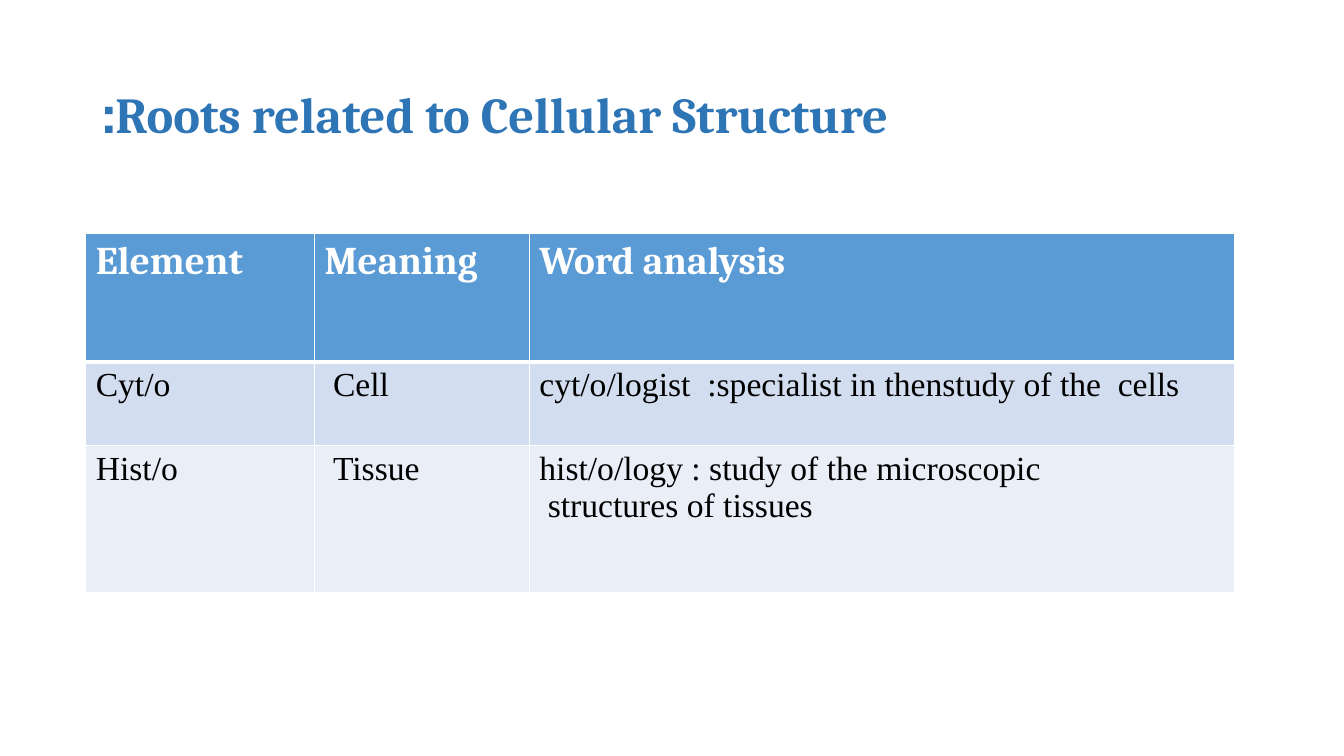
from lxml import etree
from pptx import Presentation
from pptx.dml.color import RGBColor
from pptx.enum.text import MSO_ANCHOR, PP_ALIGN
from pptx.oxml.ns import qn
from pptx.util import Inches, Pt

MIDDLE = MSO_ANCHOR.MIDDLE
LEFT = PP_ALIGN.LEFT

THEME = {
    "title": ("Cambria", 36, True, "2E75B6"),
    "header": ("Cambria", 28, True, "FFFFFF"),
    "body": ("Times New Roman", 24, False, "000000"),
    "fills": ["5B9BD5", "D2DEEF", "EAEFF7"],
    "border": "FFFFFF",
}


def write_rtl(frame, text, style):
    face, size, bold, color = THEME[style]
    frame.text = text
    for paragraph in frame.paragraphs:
        paragraph.alignment = LEFT
        paragraph._p.get_or_add_pPr().set("rtl", "1")
        paragraph.font.name = face
        paragraph.font.size = Pt(size)
        paragraph.font.bold = bold
        paragraph.font.color.rgb = RGBColor.from_string(color)


def add_borders(cell, widths):
    properties = cell._tc.get_or_add_tcPr()
    for position, (side, width) in enumerate(widths.items()):
        line = etree.Element(qn(f"a:{side}"), w=str(Pt(width)))
        fill = etree.SubElement(line, qn("a:solidFill"))
        etree.SubElement(fill, qn("a:srgbClr"), val=THEME["border"])
        properties.insert(position, line)


prs = Presentation()
prs.slide_width = Inches(13.33)
prs.slide_height = Inches(7.5)
slide = prs.slides.add_slide(prs.slide_layouts[6])

heading = slide.shapes.add_textbox(
    Inches(0.92), Inches(0.4), Inches(9.88), Inches(1.45)
).text_frame
heading.word_wrap = True
heading.vertical_anchor = MIDDLE
write_rtl(heading, "Roots related to Cellular Structure:", "title")

ROOTS = [
    ("Element", "Meaning", "Word analysis"),
    ("Cyt/o", "Cell ", "cyt/o/logist  :specialist in thenstudy of the  cells"),
    ("Hist/o", "Tissue ",
     "hist/o/logy : study of the microscopic\nstructures of tissues "),
]
COLUMN_WIDTHS = [2.27, 2.13, 7]
ROW_HEIGHTS = [1.27, 0.83, 1.46]

roots_table = slide.shapes.add_table(
    len(ROOTS), len(COLUMN_WIDTHS), Inches(0.85), Inches(2.32),
    Inches(sum(COLUMN_WIDTHS)), Inches(sum(ROW_HEIGHTS)),
).table
for column, width in zip(roots_table.columns, COLUMN_WIDTHS):
    column.width = Inches(width)

for r, (entries, height) in enumerate(zip(ROOTS, ROW_HEIGHTS)):
    roots_table.rows[r].height = Inches(height)
    widths = {"lnL": 1, "lnR": 1, "lnT": 3 if r == 1 else 1, "lnB": 3 if r == 0 else 1}
    for c, entry in enumerate(entries):
        cell = roots_table.cell(r, c)
        cell.fill.solid()
        cell.fill.fore_color.rgb = RGBColor.from_string(THEME["fills"][r])
        write_rtl(cell.text_frame, entry, "body" if r else "header")
        add_borders(cell, widths)

prs.save("out.pptx")
